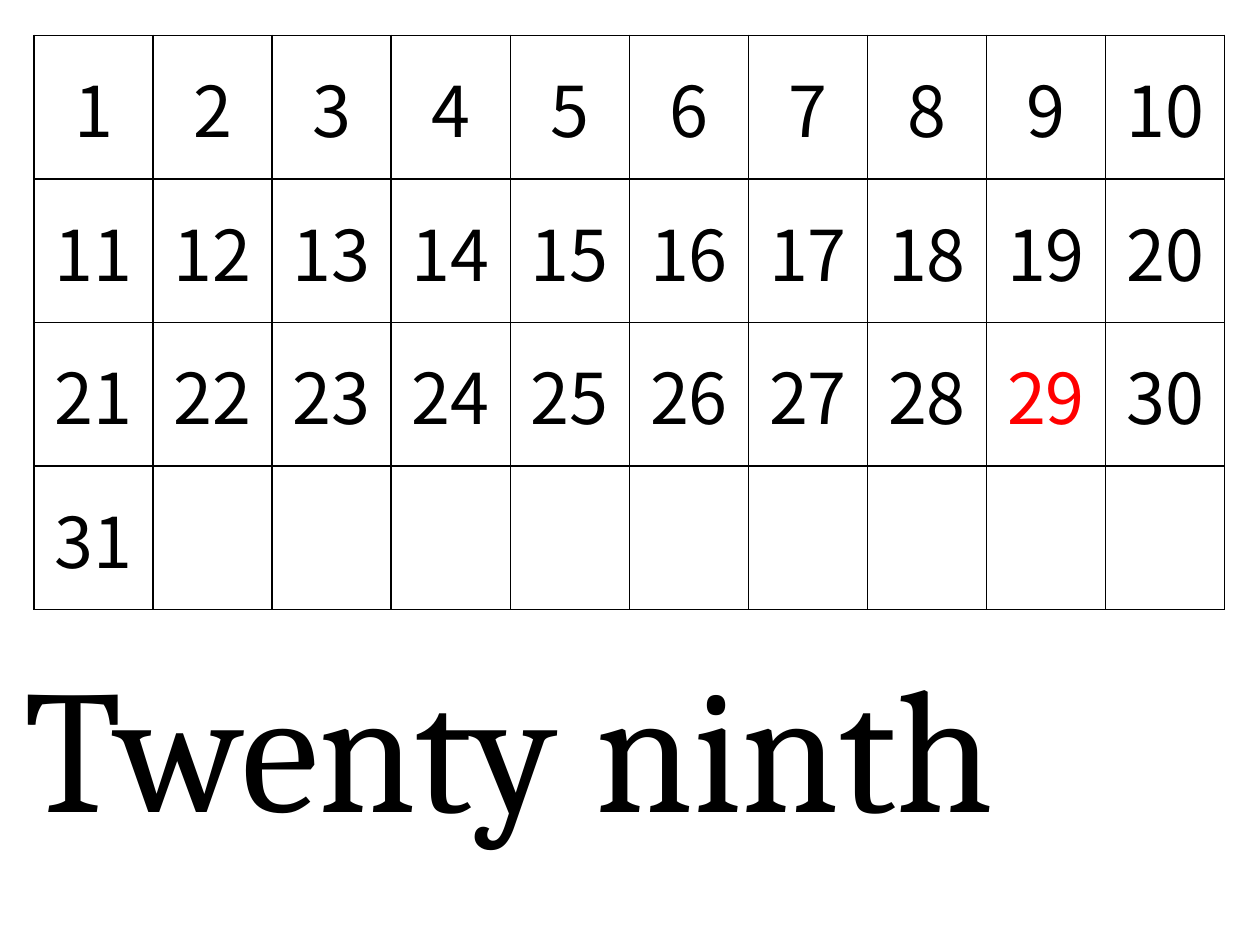
import dataclasses

import lxml.etree
import pptx
import pptx.dml.color
import pptx.enum.text
import pptx.oxml.ns
import pptx.util

Inches = pptx.util.Inches
COLORS = {"ink": "000000", "highlight": "FF0000"}
COLUMNS, ROWS = 10, 4
LAST_DAY, CHOSEN_DAY = 31, 29


@dataclasses.dataclass(frozen=True)
class TextStyle:
    font: str
    size: int
    color: str = "ink"


DAY = TextStyle("Noto Sans CJK JP", 40)
CHOSEN = dataclasses.replace(DAY, color="highlight")
TITLE = TextStyle("Cambria", 100)


def add_run(paragraph, text: str, style: TextStyle) -> None:
    run = paragraph.add_run()
    run.text = text
    run.font.name = style.font
    run.font.size = pptx.util.Pt(style.size)
    run.font.bold = False
    run.font.color.rgb = pptx.dml.color.RGBColor.from_string(COLORS[style.color])


def add_borders(cell, color: str, width: float) -> None:
    qn = pptx.oxml.ns.qn
    properties = cell._tc.get_or_add_tcPr()
    for side in ("lnL", "lnR", "lnT", "lnB"):
        line = lxml.etree.SubElement(properties, qn(f"a:{side}"), w=str(pptx.util.Pt(width)))
        fill = lxml.etree.SubElement(line, qn("a:solidFill"))
        lxml.etree.SubElement(fill, qn("a:srgbClr"), val=COLORS[color])


def add_calendar(slide) -> None:
    frame = slide.shapes.add_table(
        ROWS, COLUMNS, Inches(0.27), Inches(0.28), Inches(9.45), Inches(4.56)
    )
    table = frame.table
    table.first_row = False
    table.horz_banding = False
    for day, cell in enumerate(table.iter_cells(), start=1):
        add_borders(cell, "ink", 1)
        cell.fill.background()
        cell.vertical_anchor = pptx.enum.text.MSO_ANCHOR.MIDDLE
        if day <= LAST_DAY:
            paragraph = cell.text_frame.paragraphs[0]
            paragraph.alignment = pptx.enum.text.PP_ALIGN.CENTER
            add_run(paragraph, str(day), CHOSEN if day == CHOSEN_DAY else DAY)


def add_title(slide, text: str) -> None:
    shape = slide.shapes.add_textbox(Inches(0.1), Inches(5.01), Inches(9.03), Inches(1.78))
    shape.text_frame.word_wrap = False
    shape.text_frame.auto_size = pptx.enum.text.MSO_AUTO_SIZE.SHAPE_TO_FIT_TEXT
    add_run(shape.text_frame.paragraphs[0], text, TITLE)


def main() -> None:
    """Build a slide with a month grid and the chosen day in words."""
    presentation = pptx.Presentation()
    presentation.slide_width = Inches(10)
    presentation.slide_height = Inches(7.5)
    slide = presentation.slides.add_slide(presentation.slide_layouts[6])
    add_calendar(slide)
    add_title(slide, "Twenty ninth")
    presentation.save("out.pptx")


if __name__ == "__main__":
    main()
